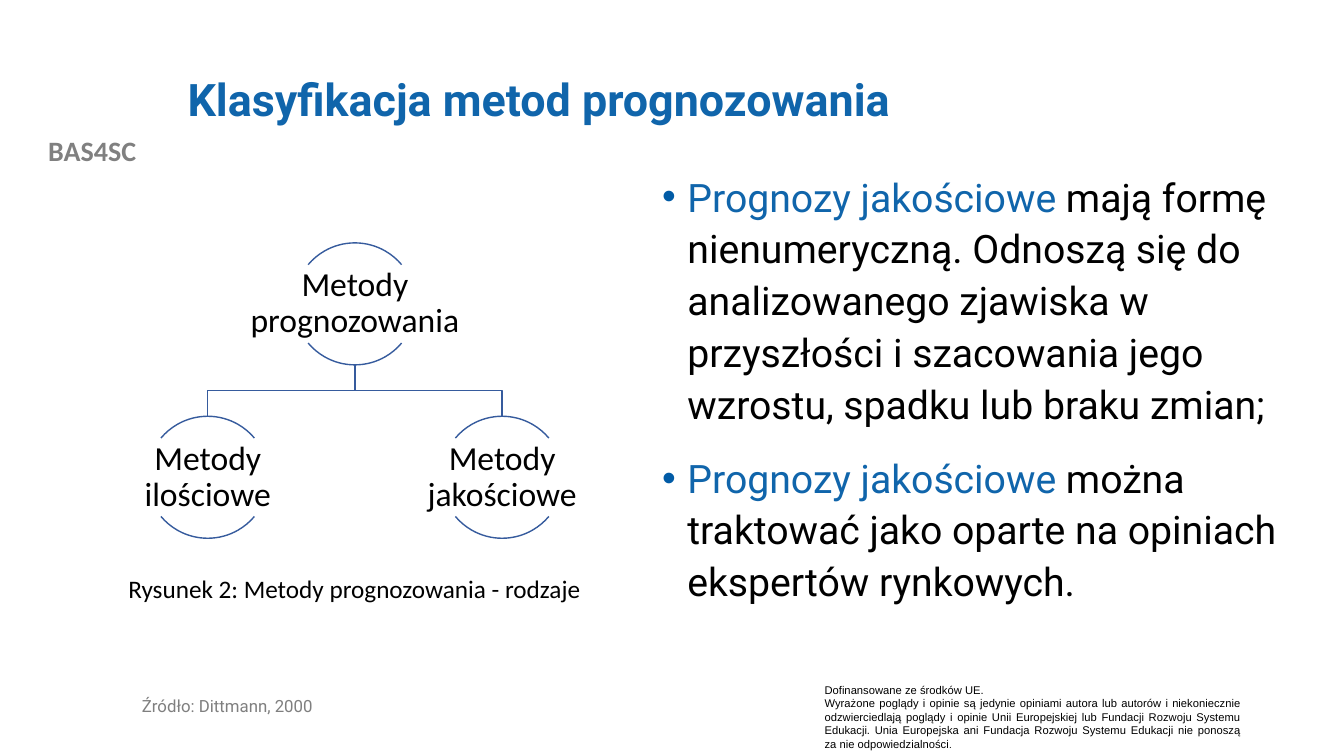
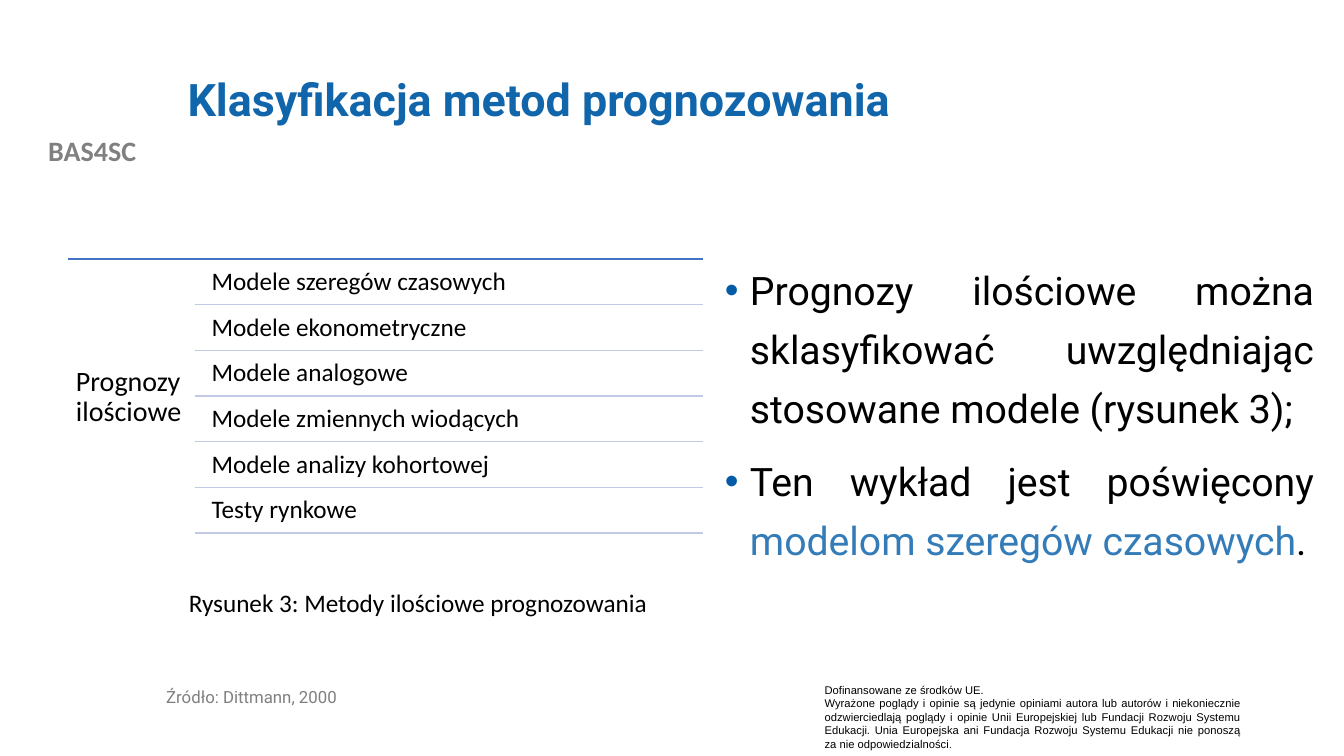
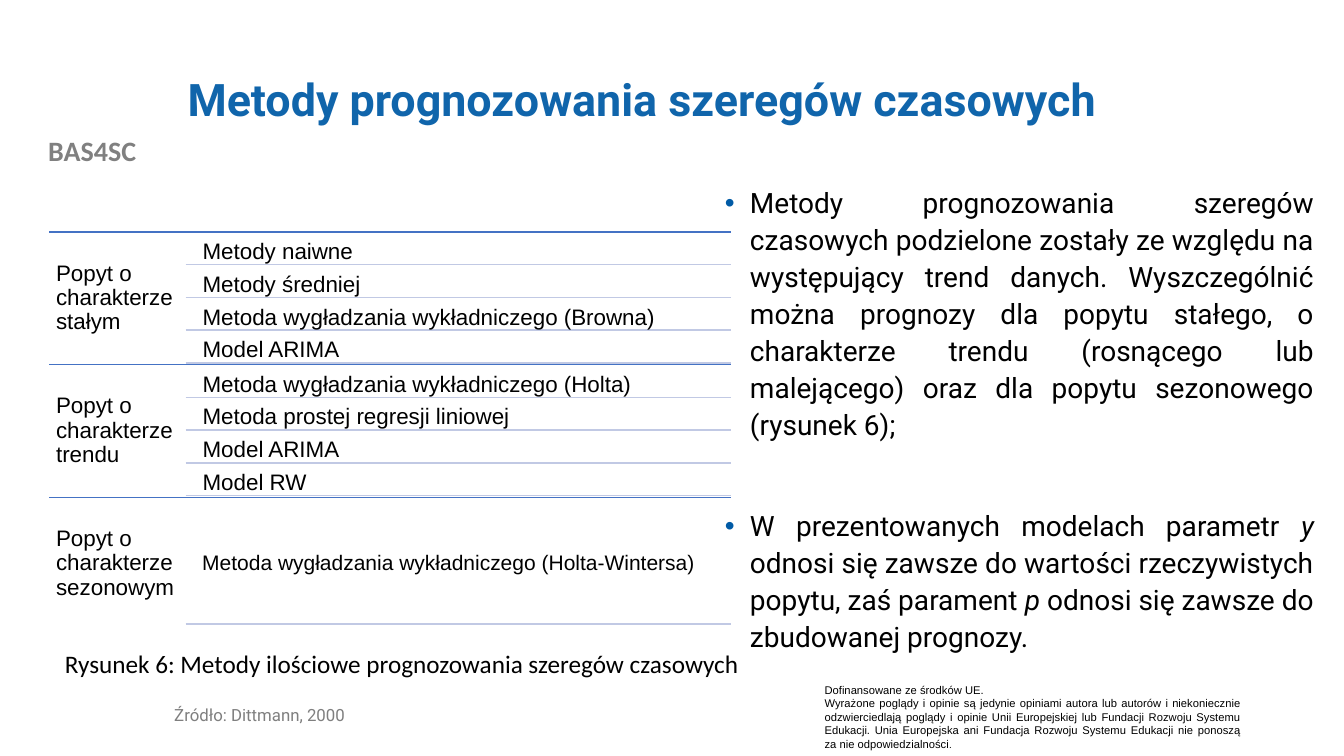
from dataclasses import dataclass

from lxml import etree
from pptx import Presentation
from pptx.dml.color import RGBColor
from pptx.enum.shapes import MSO_CONNECTOR, MSO_SHAPE
from pptx.enum.text import MSO_ANCHOR, MSO_AUTO_SIZE, PP_ALIGN
from pptx.oxml.ns import qn
from pptx.util import Inches, Pt

ARC = MSO_SHAPE.ARC
STRAIGHT = MSO_CONNECTOR.STRAIGHT
TOP, MIDDLE = MSO_ANCHOR.TOP, MSO_ANCHOR.MIDDLE
NO_AUTOFIT = MSO_AUTO_SIZE.NONE
LEFT, CENTER, JUSTIFY = PP_ALIGN.LEFT, PP_ALIGN.CENTER, PP_ALIGN.JUSTIFY


@dataclass(frozen=True)
class Theme:
    title: str = "1065AB"
    accent: str = "347CB8"
    bullet: str = "015BA6"
    text: str = "000000"
    brand: str = "808080"
    source: str = "7F7F7F"
    tree_line: str = "365B9D"
    group_line: str = "4472C4"
    item_line: str = "C1C9E4"
    heading_font: str = "Roboto"
    diagram_font: str = "Calibri"
    small_font: str = "Arial"
    title_size: int = 32
    node_size: int = 24
    brand_size: int = 20
    caption_size: int = 18
    source_size: int = 12
    footer_size: int = 8
    line_width: int = 1


THEME = Theme()
SLIDE_SIZE = (13.33, 7.5)
TITLE_BOX = (1.76, 0.4, 10.66, 1.22)
BRAND_BOX = (0, 1.28, 1.83, 0.44)
FOOTER_BOX = (8.08, 6.73, 4.33, 0.77)
INSETS = (0.1, 0.05, 0.1, 0.05)

BRAND = "BAS4SC"
SOURCE = "Źródło: Dittmann, 2000"
FOOTER = [
    ["Dofinansowane ze środków UE."],
    ["Wyrażone poglądy i opinie są jedynie opiniami autora lub autorów i niekoniecznie "
     "odzwierciedlają poglądy i opinie Unii Europejskiej lub Fundacji Rozwoju Systemu "
     "Edukacji. Unia Europejska ani Fundacja Rozwoju Systemu Edukacji nie ponoszą za "
     "nie odpowiedzialności", (".", {"size": 7})],
]

# A paragraph is a list of runs; a run is a text or a (text, font changes) pair.
BLUE = {"color": THEME.title}
ITALIC = {"italic": True}
SLIDES = [
    {
        "title": "Klasyfikacja metod prognozowania",
        "body": [
            [("Prognozy jakościowe ", BLUE),
             "mają formę nienumeryczną. Odnoszą się do analizowanego zjawiska w "
             "przyszłości i szacowania jego wzrostu, spadku lub braku zmian;"],
            [("Prognozy jakościowe ", BLUE),
             "można traktować jako oparte na opiniach ekspertów rynkowych."],
        ],
        "body_box": (6.47, 1.62, 6.67, 4.76),
        "body_format": {"size": 28, "line_spacing": 1.1, "gap": 16, "alignment": LEFT},
        "source_box": (1.31, 6.88, 6.67, 0.28),
        "caption": "Rysunek 2: Metody prognozowania - rodzaje",
        "caption_box": (1.15, 5.64, 4.73, 0.4),
        "tree": {
            "root": "Metody prognozowania",
            "children": ["Metody ilościowe", "Metody jakościowe"],
            "center": 3.52, "top": 2.41, "diameter": 1.21,
            "column": 2.92, "row": 1.72,
        },
    },
    {
        "title": "Klasyfikacja metod prognozowania",
        "body": [
            ["Prognozy ilościowe można sklasyfikować uwzględniając stosowane modele "
             "(rysunek 3);"],
            ["Ten wykład jest poświęcony ",
             ("modelom szeregów czasowych", {"color": THEME.accent}), "."],
        ],
        "body_box": (7.09, 2.48, 6.04, 3.65),
        "body_format": {"size": 28, "line_spacing": 1.25, "gap": 10, "alignment": JUSTIFY},
        "source_box": (1.55, 6.79, 6.67, 0.28),
        "caption": "Rysunek 3: Metody ilościowe prognozowania",
        "caption_box": (1.55, 5.78, 5.19, 0.4),
        "groups": [
            ("Prognozy ilościowe", 20, 18, [
                "Modele szeregów czasowych", "Modele ekonometryczne", "Modele analogowe",
                "Modele zmiennych wiodących", "Modele analizy kohortowej", "Testy rynkowe"]),
        ],
        "groups_box": (0.67, 2.57, 6.3, 2.74),
        "groups_font": THEME.diagram_font,
    },
    {
        "title": "Metody prognozowania szeregów czasowych",
        "body": [
            ["Metody prognozowania szeregów czasowych podzielone zostały ze względu na "
             "występujący trend danych. Wyszczególnić można prognozy dla popytu stałego, o "
             "charakterze trendu (rosnącego lub malejącego) oraz dla popytu sezonowego "
             "(rysunek 6);"],
            ["W prezentowanych modelach parametr ", ("y", ITALIC),
             " odnosi się zawsze do wartości rzeczywistych popytu, zaś parament ",
             ("p ", ITALIC), "odnosi się zawsze do zbudowanej prognozy."],
        ],
        "body_box": (7.09, 1.76, 6.04, 4.85),
        "body_format": {"size": 20, "line_spacing": 1.1, "gap": 46, "alignment": JUSTIFY},
        "source_box": (1.63, 6.96, 6.67, 0.28),
        "caption": "Rysunek 6: Metody ilościowe prognozowania szeregów czasowych",
        "caption_box": (0.5, 6.38, 6.97, 0.4),
        "groups": [
            ("Popyt o charakterze stałym", 16, 16, [
                "Metody naiwne", "Metody średniej",
                "Metoda wygładzania wykładniczego (Browna)", "Model ARIMA"]),
            ("Popyt o charakterze trendu", 16, 16, [
                "Metoda wygładzania wykładniczego (Holta)",
                "Metoda prostej regresji liniowej", "Model ARIMA", "Model RW"]),
            ("Popyt o charakterze sezonowym", 16, 15, [
                "Metoda wygładzania wykładniczego (Holta-Wintersa)"]),
        ],
        "groups_box": (0.49, 2.3, 6.76, 3.95),
        "groups_font": THEME.small_font,
    },
]


def add_bullet(paragraph):
    properties = paragraph._p.get_or_add_pPr()
    properties.set("marL", str(Inches(0.25)))
    properties.set("indent", str(-Inches(0.25)))
    color = etree.SubElement(properties, qn("a:buClr"))
    etree.SubElement(color, qn("a:srgbClr"), val=THEME.bullet)
    etree.SubElement(properties, qn("a:buFont"), typeface=THEME.small_font)
    etree.SubElement(properties, qn("a:buChar"), char="•")


def format_font(font, values):
    for name, value in values.items():
        if name == "color":
            font.color.rgb = RGBColor.from_string(value)
        else:
            setattr(font, name, Pt(value) if name == "size" else value)


def fill_text(shape, paragraphs, font, alignment=LEFT, line_spacing=1.0, gap=0,
              anchor=TOP, insets=INSETS, bullets=False):
    frame = shape.text_frame
    frame.word_wrap = True
    frame.auto_size = NO_AUTOFIT
    frame.vertical_anchor = anchor
    for side, inset in zip(("left", "top", "right", "bottom"), insets):
        setattr(frame, f"margin_{side}", Inches(inset))
    for index, runs in enumerate(paragraphs):
        paragraph = frame.add_paragraph() if index else frame.paragraphs[0]
        if bullets:
            add_bullet(paragraph)
        paragraph.alignment = alignment
        paragraph.line_spacing = line_spacing
        paragraph.space_before = Pt(gap if index else 0)
        for item in runs:
            text, changes = (item, {}) if isinstance(item, str) else item
            run = paragraph.add_run()
            run.text = text
            format_font(run.font, {**font, **changes})


def font_of(name, size, color=THEME.text, **more):
    return {"name": name, "size": size, "color": color, **more}


def add_text(slide, box, paragraphs, font, **layout):
    shape = slide.shapes.add_textbox(*map(Inches, box))
    fill_text(shape, paragraphs, font, **layout)


def style_line(shape, color):
    shape.line.color.rgb = RGBColor.from_string(color)
    shape.line.width = Pt(THEME.line_width)


def add_rule(slide, left, right, y, color):
    rule = slide.shapes.add_connector(STRAIGHT, *map(Inches, (left, y, right, y)))
    style_line(rule, color)
    etree.SubElement(rule._element.spPr, qn("a:effectLst"))


def style_outline(shape):
    shape.shadow.inherit = False
    shape.fill.background()
    style_line(shape, THEME.tree_line)


def add_node(slide, text, center, top, diameter):
    """Draw a label between an upper and a lower arc of one circle."""
    for start, end in ((220, 320), (40, 140)):
        arc = slide.shapes.add_shape(
            ARC, *map(Inches, (center - diameter / 2, top, diameter, diameter)))
        for index, degrees in enumerate((start, end)):
            arc.adjustments[index] = degrees * 0.6
        style_outline(arc)
    box = (center - diameter, top + 0.18 * diameter, 2 * diameter, 0.64 * diameter)
    add_text(slide, box, [[text]], font_of(THEME.diagram_font, THEME.node_size),
             alignment=CENTER, line_spacing=0.9, anchor=MIDDLE, insets=(0.02,) * 4)


def add_tree(slide, tree):
    center, top, diameter = tree["center"], tree["top"], tree["diameter"]
    child_top, bottom = top + tree["row"], top + diameter
    bend = (bottom + child_top) / 2
    first = center - tree["column"] * (len(tree["children"]) - 1) / 2
    nodes = [(text, first + index * tree["column"], child_top)
             for index, text in enumerate(tree["children"])]
    for _, x, _ in nodes:
        points = [(center, bottom), (center, bend), (x, bend), (x, child_top)]
        start, *others = [tuple(map(Inches, point)) for point in points]
        builder = slide.shapes.build_freeform(*start)
        builder.add_line_segments(others, close=False)
        style_outline(builder.convert_to_shape())
    for text, x, y in [(tree["root"], center, top), *nodes]:
        add_node(slide, text, x, y, diameter)


def add_groups(slide, groups, box, font_name):
    """Draw each group as a label at the left and ruled items at the right."""
    left, top, width, height = box
    right, label_width = left + width, 0.2 * width
    item_left = left + label_width + 0.015 * width
    group_height = height / len(groups)
    for row, (label, label_size, item_size, items) in enumerate(groups):
        group_top = top + row * group_height
        add_rule(slide, left, right, group_top, THEME.group_line)
        cells = [(label, label_size, MIDDLE, (left, group_top, label_width, group_height))]
        count = len(items)
        item_height = group_height / (count + 0.05 * (count + 1))
        for index, item in enumerate(items):
            y = group_top + item_height * (0.05 + 1.05 * index)
            cells.append((item, item_size, TOP if count > 1 else MIDDLE,
                          (item_left, y, right - item_left, item_height)))
            add_rule(slide, left + label_width, right, y + item_height, THEME.item_line)
        for text, size, anchor, cell in cells:
            add_text(slide, cell, [[text]], font_of(font_name, size), line_spacing=0.9,
                     anchor=anchor, insets=(0.3 * size / 72,) * 4)


def add_frame(slide, title):
    """Set the title, the brand mark and the funding note that all slides share."""
    placeholder = slide.shapes.title
    for name, value in zip(("left", "top", "width", "height"), TITLE_BOX):
        setattr(placeholder, name, Inches(value))
    fill_text(placeholder, [[title]],
              font_of(THEME.heading_font, THEME.title_size, THEME.title, bold=True),
              line_spacing=0.9, anchor=MIDDLE)
    add_text(slide, BRAND_BOX, [[BRAND]],
             font_of(THEME.diagram_font, THEME.brand_size, THEME.brand, bold=True),
             alignment=CENTER)
    add_text(slide, FOOTER_BOX, FOOTER, font_of(THEME.small_font, THEME.footer_size),
             alignment=JUSTIFY)


def add_slide(presentation, content):
    slide = presentation.slides.add_slide(presentation.slide_layouts.get_by_name("Title Only"))
    add_frame(slide, content["title"])
    layout = dict(content["body_format"])
    add_text(slide, content["body_box"], content["body"],
             font_of(THEME.heading_font, layout.pop("size")), bullets=True, **layout)
    if "tree" in content:
        add_tree(slide, content["tree"])
    if "groups" in content:
        add_groups(slide, content["groups"], content["groups_box"], content["groups_font"])
    add_text(slide, content["source_box"], [[SOURCE]],
             font_of(THEME.heading_font, THEME.source_size, THEME.source), line_spacing=0.9)
    add_text(slide, content["caption_box"], [[content["caption"]]],
             font_of(THEME.diagram_font, THEME.caption_size), alignment=CENTER)


def main():
    presentation = Presentation()
    presentation.slide_width, presentation.slide_height = map(Inches, SLIDE_SIZE)
    for content in SLIDES:
        add_slide(presentation, content)
    presentation.save("out.pptx")


if __name__ == "__main__":
    main()
